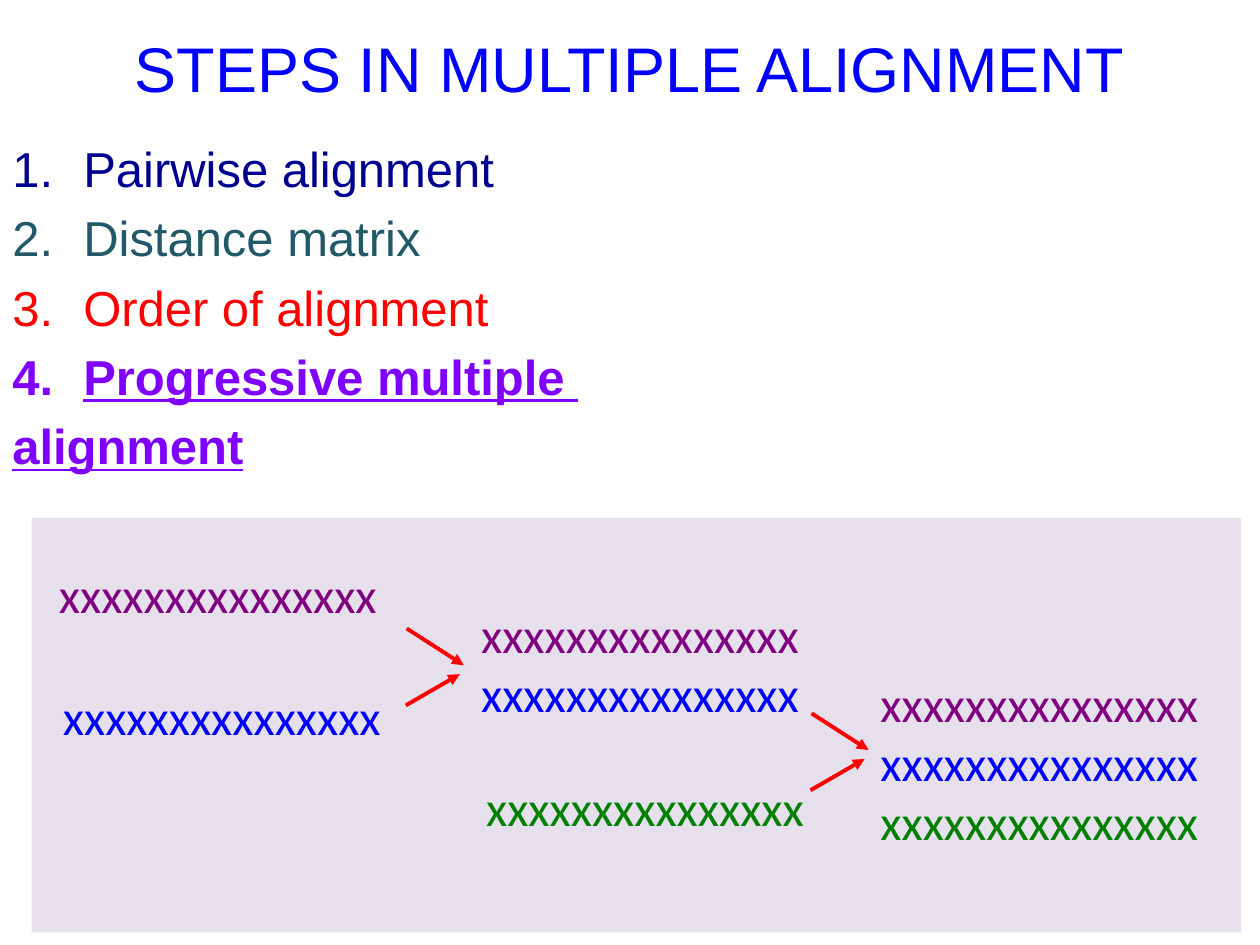
from pptx import Presentation
from pptx.dml.color import RGBColor
from pptx.enum.shapes import MSO_CONNECTOR, MSO_SHAPE
from pptx.enum.text import MSO_ANCHOR, PP_ALIGN
from pptx.oxml.ns import qn
from pptx.util import Cm, Pt
from lxml.etree import SubElement

COLORS = {
    "panel": "E6E0EC",
    "blue": "0000FF",
    "purple": "800080",
    "green": "008000",
    "red": "FF0000",
    "navy": "000090",
    "teal": "215968",
    "violet": "8000FF",
}
SEQUENCE = "xxxxxxxxxxxxxxx"
SEQUENCE_GROUPS = [
    (0.94, 11.25, ["purple"]),
    (1.02, 13.72, ["blue"]),
    (9.45, 12.07, ["purple", "blue"]),
    (9.55, 15.54, ["green"]),
    (17.5, 13.46, ["purple", "blue", "green"]),
]
STEPS = [
    ("Pairwise alignment", "navy"),
    ("Distance matrix", "teal"),
    ("Order of alignment", "red"),
    ("Progressive multiple ", "violet"),
    ("alignment", "violet"),
]
NUMBERED_STEPS = 4
MERGE_OFFSETS = [(0, 0), (8.16, 1.71)]


def color(name):
    return RGBColor.from_string(COLORS[name])


def format_runs(paragraph, font_name, size, color_name, emphasis=None):
    for run in paragraph.runs:
        run.font.name = font_name
        run.font.size = Pt(size)
        run.font.color.rgb = color(color_name)
        run.font.bold = emphasis
        run.font.underline = emphasis


def add_text(slide, left, top, width, height, lines, wrap=True):
    shape = slide.shapes.add_textbox(Cm(left), Cm(top), Cm(width), Cm(height))
    shape.text_frame.word_wrap = wrap
    shape.text_frame.text = "\n".join(lines)
    return shape.text_frame


def add_title(slide):
    text_frame = add_text(slide, 1.9, -0.23, 21.59, 3.18, ["STEPS IN MULTIPLE ALIGNMENT"])
    text_frame.vertical_anchor = MSO_ANCHOR.MIDDLE
    paragraph = text_frame.paragraphs[0]
    paragraph.alignment = PP_ALIGN.CENTER
    format_runs(paragraph, "Arial", 36, "blue")


def add_panel(slide):
    shape = slide.shapes.add_shape(
        MSO_SHAPE.RECTANGLE, Cm(0.64), Cm(10.44), Cm(24.38), Cm(8.36)
    )
    shape.shadow.inherit = False
    shape.fill.solid()
    shape.fill.fore_color.rgb = color("panel")
    shape.line.fill.background()


def add_sequences(slide, left, top, color_names):
    height = 0.25 + 1.19 * len(color_names)
    text_frame = add_text(
        slide, left, top, 6.99, height, [SEQUENCE] * len(color_names), wrap=False
    )
    for paragraph, color_name in zip(text_frame.paragraphs, color_names):
        format_runs(paragraph, "Calibri", 28, color_name)


def add_arrow(slide, start_x, start_y, end_x, end_y):
    connector = slide.shapes.add_connector(
        MSO_CONNECTOR.STRAIGHT, Cm(start_x), Cm(start_y), Cm(end_x), Cm(end_y)
    )
    connector.line.color.rgb = color("red")
    connector.line.width = Pt(2.25)
    SubElement(connector.line._get_or_add_ln(), qn("a:tailEnd"), type="triangle")
    SubElement(connector._element.spPr, qn("a:effectLst"))


def add_merge_arrows(slide, x, y):
    add_arrow(slide, x + 8.2, y + 12.67, x + 9.35, y + 13.41)
    add_arrow(slide, x + 8.18, y + 14.22, x + 9.27, y + 13.59)


def number_paragraph(paragraph):
    properties = paragraph._p.get_or_add_pPr()
    properties.set("marL", str(Cm(1.43)))
    properties.set("indent", str(-Cm(1.43)))
    SubElement(properties, qn("a:buFont"), typeface="+mj-lt")
    SubElement(properties, qn("a:buAutoNum"), type="arabicPeriod")


def add_steps(slide):
    text_frame = add_text(slide, 0, 2.67, 12.7, 7.09, [text for text, _ in STEPS])
    for index, (paragraph, (_, color_name)) in enumerate(zip(text_frame.paragraphs, STEPS)):
        if index < NUMBERED_STEPS:
            number_paragraph(paragraph)
        paragraph.line_spacing = Pt(33.6)
        paragraph.space_after = Pt(6)
        emphasis = True if color_name == "violet" else None
        format_runs(paragraph, "Arial", 28, color_name, emphasis)


def main():
    presentation = Presentation()
    presentation.slide_width = Cm(25.4)
    presentation.slide_height = Cm(19.05)
    slide = presentation.slides.add_slide(presentation.slide_layouts[6])
    add_panel(slide)
    add_title(slide)
    for left, top, color_names in SEQUENCE_GROUPS:
        add_sequences(slide, left, top, color_names)
    for x, y in MERGE_OFFSETS:
        add_merge_arrows(slide, x, y)
    add_steps(slide)
    presentation.save("out.pptx")


if __name__ == "__main__":
    main()
